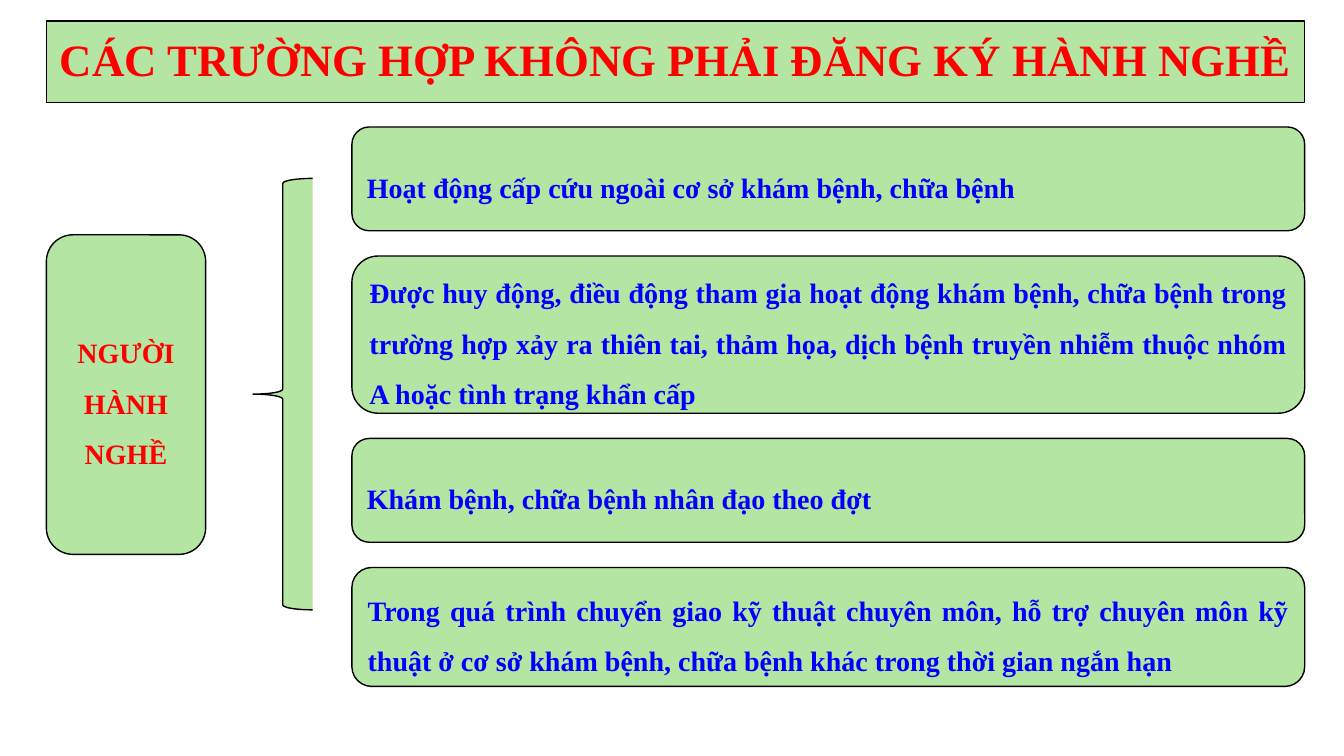
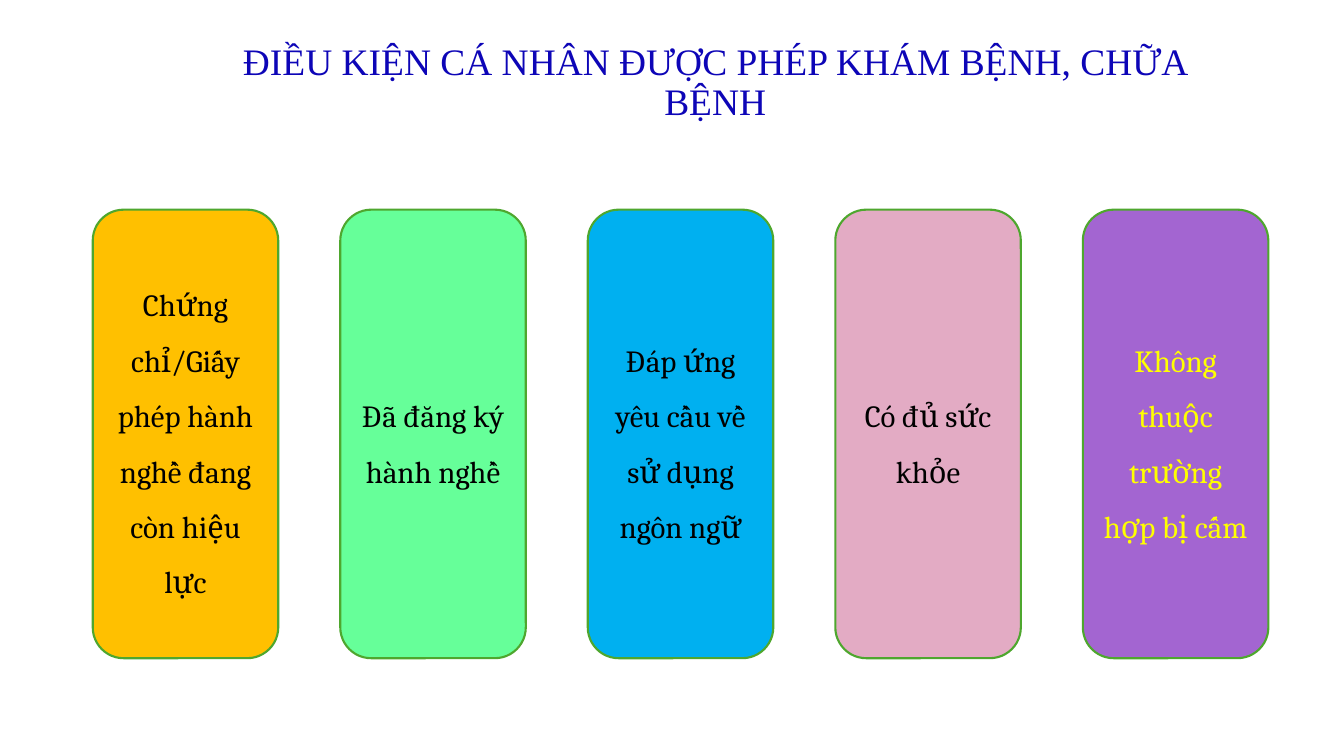
"""Build two slides on registration and conditions for medical practice."""
from pptx import Presentation
from pptx.dml.color import RGBColor
from pptx.enum.shapes import MSO_SHAPE as Shape
from pptx.enum.text import MSO_ANCHOR as Anchor, PP_ALIGN as Align
from pptx.util import Inches, Pt

WIDTH, HEIGHT = 13.33, 7.5
SERIF, BODY = "Times New Roman", "Cambria"
GREEN, BLACK, RED, BLUE = "B4E5A2", "000000", "FF0000", "0000FF"
NAVY, YELLOW, OUTLINE = "0D05B7", "FFFF00", "4EA72E"

EXEMPT_TITLE = "CÁC TRƯỜNG HỢP KHÔNG PHẢI ĐĂNG KÝ HÀNH NGHỀ"
PRACTITIONER = "NGƯỜI HÀNH NGHỀ"
EXEMPT_CASES = [
    ("Hoạt động cấp cứu ngoài cơ sở khám bệnh, chữa bệnh", 1.03),
    ("Được huy động, điều động tham gia hoạt động khám bệnh, chữa bệnh trong "
     "trường hợp xảy ra thiên tai, thảm họa, dịch bệnh truyền nhiễm thuộc nhóm "
     "A hoặc tình trạng khẩn cấp", 1.56),
    ("Khám bệnh, chữa bệnh nhân đạo theo đợt", 1.03),
    ("Trong quá trình chuyển giao kỹ thuật chuyên môn, hỗ trợ chuyên môn kỹ "
     "thuật ở cơ sở khám bệnh, chữa bệnh khác trong thời gian ngắn hạn", 1.18),
]
CONDITIONS_TITLE = "ĐIỀU KIỆN CÁ NHÂN ĐƯỢC PHÉP KHÁM BỆNH, CHỮA BỆNH"
CONDITIONS = [
    ("Chứng chỉ/Giấy phép hành nghề đang còn hiệu lực", "FFC000", BLACK),
    ("Đã đăng ký hành nghề", "66FF99", BLACK),
    ("Đáp ứng yêu cầu về sử dụng ngôn ngữ", "00B0F0", BLACK),
    ("Có đủ sức khỏe", "E3ABC4", BLACK),
    ("Không thuộc trường hợp bị cấm", "A365D1", YELLOW),
]

LEFT, RIGHT = 0.46, 12.94
CASE_LEFT, CASE_TOP, CASE_GAP = 3.49, 1.26, 0.25
CARD_LEFT, CARD_RIGHT, CARD_WIDTH = 0.92, 12.58, 1.84


def color(value):
    return RGBColor.from_string(value)


def write(shape, text, size=20, font=SERIF, fill=RED, bold=False,
          align=Align.CENTER, spacing=1.5):
    frame = shape.text_frame
    frame.word_wrap = True
    frame.vertical_anchor = Anchor.MIDDLE
    paragraph = frame.paragraphs[0]
    paragraph.alignment = align
    paragraph.line_spacing = spacing
    run = paragraph.add_run()
    run.text = text
    run.font.size = Pt(size)
    run.font.name = font
    run.font.bold = bold
    run.font.color.rgb = color(fill)


def add_box(slide, kind, box, fill=GREEN, line=BLACK, weight=1):
    shape = slide.shapes.add_shape(kind, *map(Inches, box))
    shape.shadow.inherit = False
    shape.fill.solid()
    shape.fill.fore_color.rgb = color(fill)
    shape.line.color.rgb = color(line)
    shape.line.width = Pt(weight)
    return shape


def build_exempt_cases(slide):
    title = add_box(slide, Shape.RECTANGLE, (LEFT, 0.21, RIGHT - LEFT, 0.81))
    write(title, EXEMPT_TITLE, size=32, bold=True, spacing=0.9)
    top = CASE_TOP
    for text, height in EXEMPT_CASES:
        case = add_box(slide, Shape.ROUNDED_RECTANGLE,
                       (CASE_LEFT, top, RIGHT - CASE_LEFT, height))
        write(case, text, fill=BLUE, bold=True, align=Align.JUSTIFY)
        top += height + CASE_GAP
    add_box(slide, Shape.LEFT_BRACE, (2.51, 1.77, 0.59, 4.28))
    practitioner = add_box(slide, Shape.ROUNDED_RECTANGLE, (LEFT, 2.33, 1.58, 3.17))
    write(practitioner, PRACTITIONER, bold=True)


def build_conditions(slide):
    title = slide.shapes.add_textbox(*map(Inches, (1.78, 0.4, 10.63, 0.86)))
    write(title, CONDITIONS_TITLE, size=26.7, fill=NAVY, spacing=0.9)
    pitch = (CARD_RIGHT - CARD_LEFT - CARD_WIDTH) / (len(CONDITIONS) - 1)
    for column, (text, fill, ink) in enumerate(CONDITIONS):
        card = add_box(slide, Shape.ROUNDED_RECTANGLE,
                       (CARD_LEFT + column * pitch, 2.08, CARD_WIDTH, 4.45),
                       fill=fill, line=OUTLINE, weight=1.5)
        write(card, text, size=22, font=BODY, fill=ink)


def main():
    presentation = Presentation()
    presentation.slide_width = Inches(WIDTH)
    presentation.slide_height = Inches(HEIGHT)
    for build in (build_exempt_cases, build_conditions):
        build(presentation.slides.add_slide(presentation.slide_layouts[6]))
    presentation.save("out.pptx")


if __name__ == "__main__":
    main()
